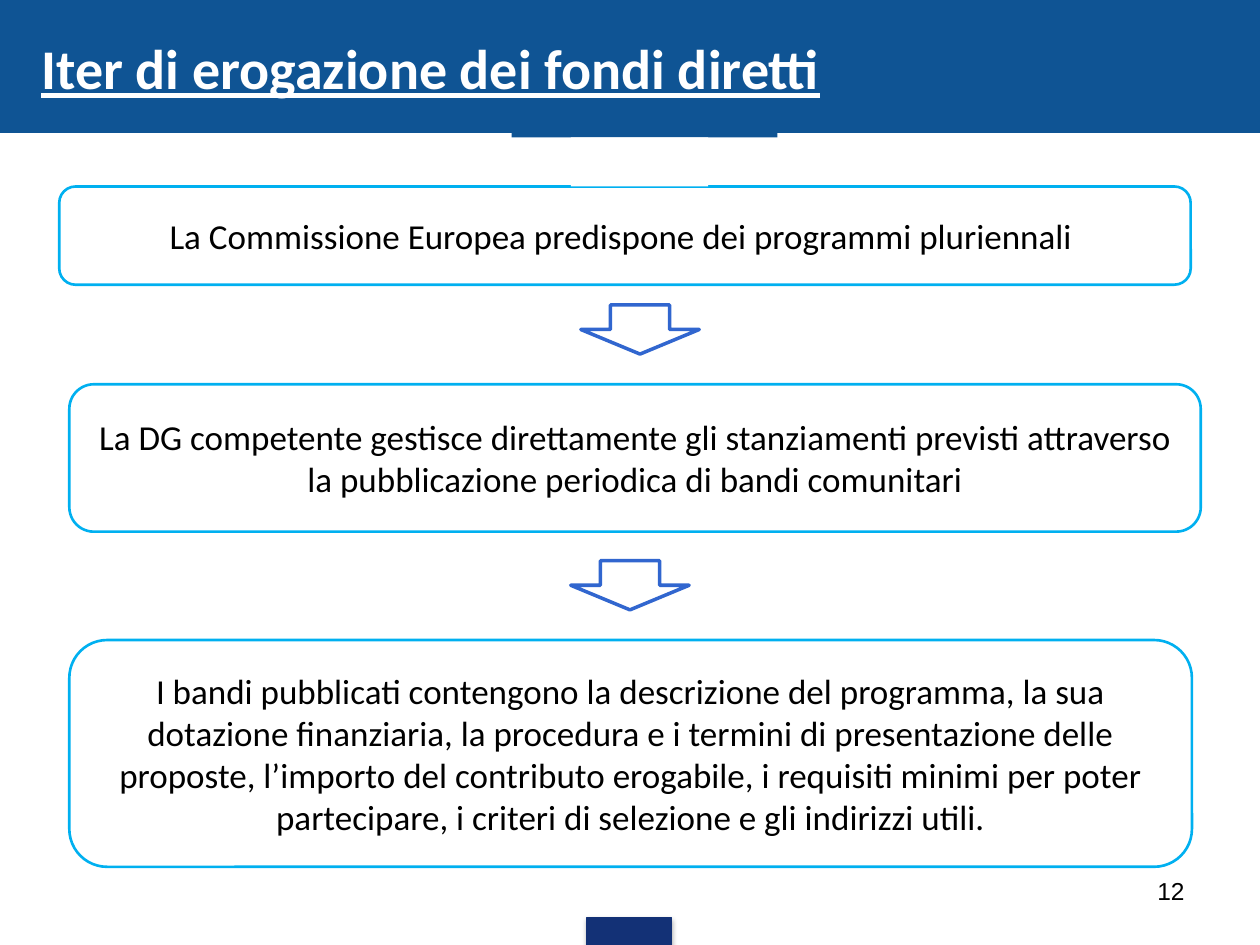
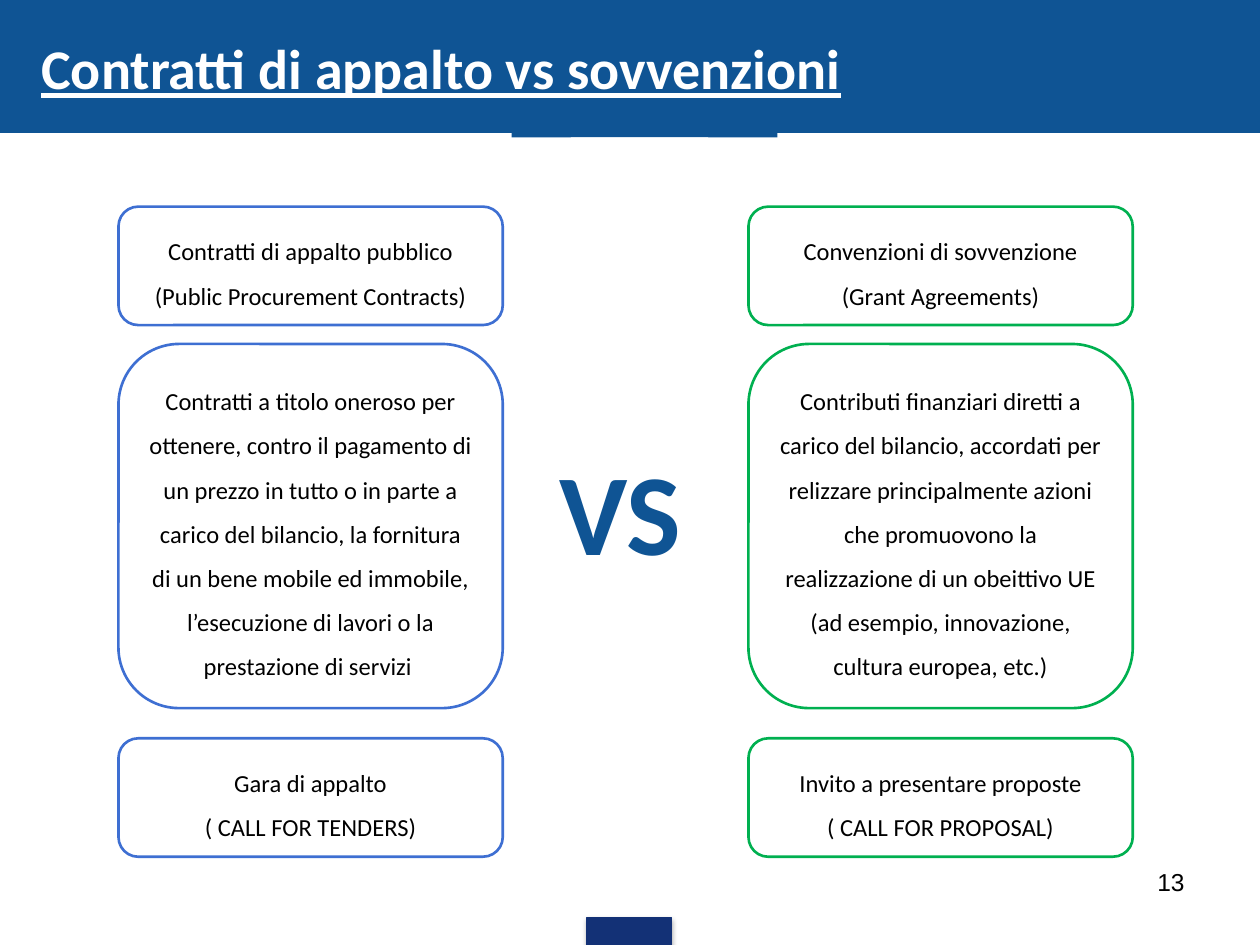
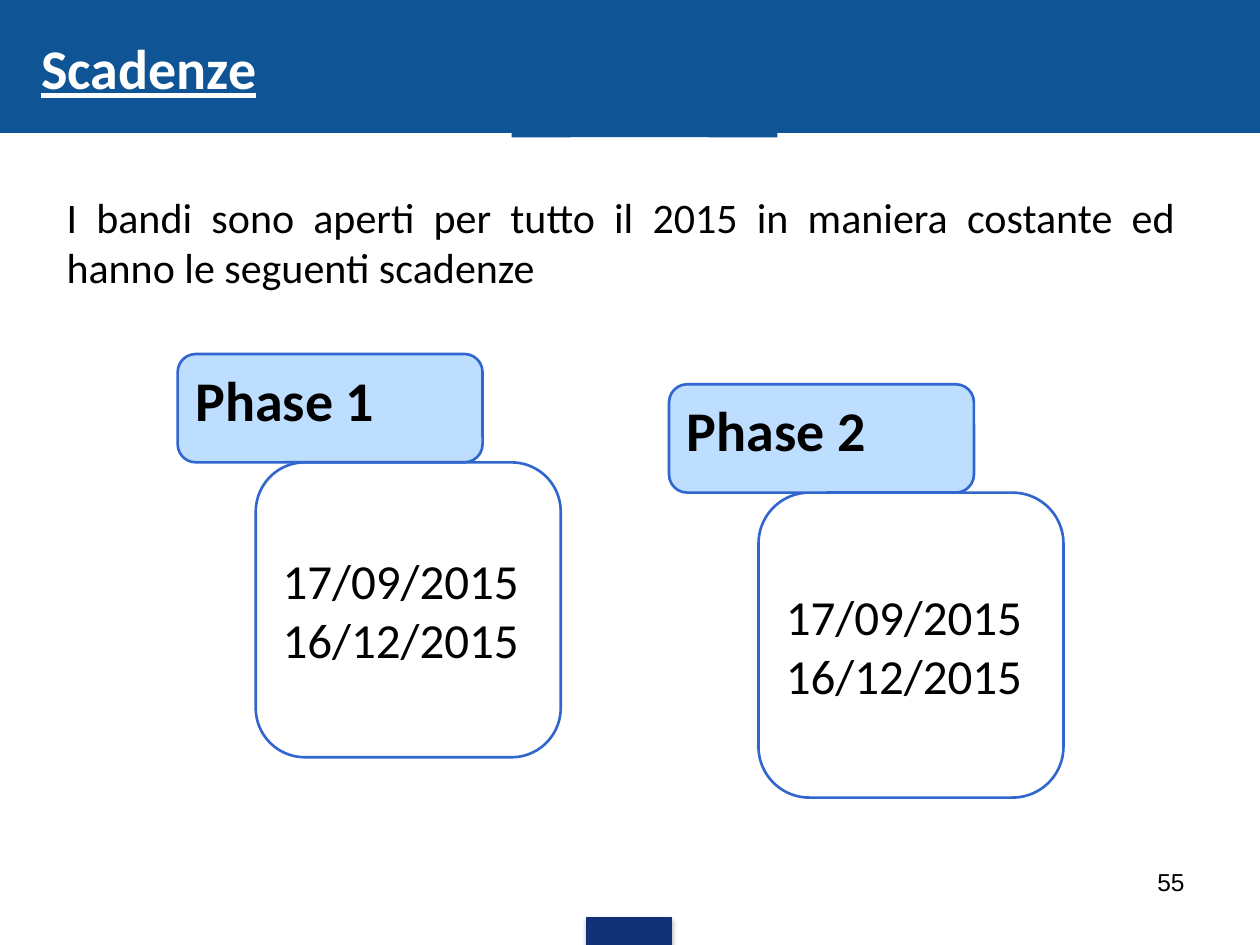
from pptx import Presentation
from pptx.dml.color import RGBColor
from pptx.enum.shapes import MSO_SHAPE as Preset
from pptx.enum.text import MSO_ANCHOR as Anchor, PP_ALIGN as Align
from pptx.oxml import parse_xml
from pptx.util import Inches, Pt

# Shared colours
BAND, FOOTER = "0F5494", "133176"
BLUE, COLUMN_BLUE, CYAN, GREEN = "3166CF", "3E6FD2", "00B0F0", "00B050"
PALE, WHITE, BLACK = "BDDEFF", "FFFFFF", "000000"

SOFT_SHADOW = (
    '<a:effectLst xmlns:a="http://schemas.openxmlformats.org/drawingml/2006/main">'
    '<a:outerShdw blurRad="39370" dist="22860" dir="5400000" rotWithShape="0">'
    '<a:srgbClr val="000000"><a:alpha val="35000"/></a:srgbClr>'
    '</a:outerShdw></a:effectLst>')


def colour(code):
    return RGBColor.from_string(code)


class SlideBuilder:
    """Holds the deck, its style and the slide being built."""

    font = "Calibri"

    def __init__(self):
        self.deck = Presentation()
        self.deck.slide_width, self.deck.slide_height = Inches(10), Inches(7.5)
        self.page = None

    def start(self):
        """Open a slide with the header band and the footer mark."""
        self.page = self.deck.slides.add_slide(self.deck.slide_layouts[6])
        self.shape(Preset.RECTANGLE, (0, 0, 10, 1.05), BAND, BAND, 0.75)
        mark = self.shape(Preset.RECTANGLE, (4.66, 7.28, 0.67, 0.22), FOOTER, FOOTER, 0.75)
        properties = mark._element.spPr
        for effect in properties.findall("{*}effectLst"):
            properties.remove(effect)
        properties.append(parse_xml(SOFT_SHADOW))

    def finish(self, title, number, number_top=6.83):
        """Add the tabs under the header, the title and the page number."""
        self.shape(Preset.RECTANGLE, (4.06, 0, 2.11, 1.09), BAND)
        self.shape(Preset.RECTANGLE, (4.53, 1.09, 1.09, 0.39), WHITE)
        self.label((0.23, 0.22, 7.58, 0.64), [title], 32, WHITE, bold=True, underline=True)
        self.label((7.17, number_top, 2.33, 0.52), [str(number)], 14,
                   align=Align.RIGHT, font="Arial")

    def shape(self, preset, place, fill=None, line=None, width=1.5):
        box = self.page.shapes.add_shape(preset, *map(Inches, place))
        box.shadow.inherit = False
        if fill:
            box.fill.solid()
            box.fill.fore_color.rgb = colour(fill)
        else:
            box.fill.background()
        if line:
            box.line.color.rgb = colour(line)
            box.line.width = Pt(width)
        else:
            box.line.fill.background()
        return box

    def card(self, place, lines, size, line, fill=WHITE, **style):
        """Rounded box with text centred in its height."""
        box = self.shape(Preset.ROUNDED_RECTANGLE, place, fill, line)
        box.text_frame.vertical_anchor = Anchor.MIDDLE
        self.set_text(box, lines, size, **style)
        return box

    def label(self, place, lines, size, ink=BLACK, **style):
        box = self.page.shapes.add_textbox(*map(Inches, place))
        self.set_text(box, lines, size, ink, **style)

    def set_text(self, box, lines, size, ink=BLACK, align=Align.LEFT, spacing=None,
                 bold=None, underline=None, font=None):
        frame = box.text_frame
        frame.word_wrap = True
        frame.text = "\n".join(lines)
        for para in frame.paragraphs:
            para.alignment = align
            if spacing:
                para.line_spacing = spacing
            for span in para.runs:
                span.font.name = font or self.font
                span.font.size = Pt(size)
                span.font.color.rgb = colour(ink)
                span.font.bold = bold
                span.font.underline = underline


def funding_steps(builder):
    builder.start()
    steps = [
        ((0.47, 1.48, 8.98, 0.78),
         "La Commissione Europea predispone dei programmi pluriennali "),
        ((0.55, 3.05, 8.98, 1.17),
         "La DG competente gestisce direttamente gli stanziamenti previsti attraverso "
         "la pubblicazione periodica di bandi comunitari"),
        ((0.55, 5.08, 8.91, 1.8),
         "I bandi pubblicati contengono la descrizione del programma, la sua dotazione "
         "finanziaria, la procedura e i termini di presentazione delle proposte, l’importo "
         "del contributo erogabile, i requisiti minimi per poter partecipare, i criteri di "
         "selezione e gli indirizzi utili."),
    ]
    for place, text in steps:
        builder.card(place, [text], 20, CYAN, align=Align.CENTER)
    for left, top in ((4.61, 2.42), (4.53, 4.45)):
        builder.shape(Preset.DOWN_ARROW, (left, top, 0.94, 0.39), WHITE, BLUE, 2)
    builder.finish("Iter di erogazione dei fondi diretti", 12, number_top=6.9)


def contracts_and_grants(builder):
    builder.start()
    rows = [(1.64, 0.94), (2.73, 2.89), (5.86, 0.94)]
    columns = [
        (0.94, COLUMN_BLUE, [
            ["Contratti di appalto pubblico", "(Public Procurement Contracts)"],
            ["Contratti a titolo oneroso per ottenere, contro il pagamento di un prezzo in "
             "tutto o in parte a carico del bilancio, la fornitura di un bene mobile ed "
             "immobile, l’esecuzione di lavori o la prestazione di servizi "],
            ["Gara di appalto", "( CALL FOR TENDERS)"]]),
        (5.94, GREEN, [
            ["Convenzioni di sovvenzione", "(Grant Agreements)"],
            ["Contributi finanziari diretti a carico del bilancio, accordati per relizzare "
             "principalmente azioni che promuovono la realizzazione di un obeittivo UE "
             "(ad esempio, innovazione, cultura europea, etc.)"],
            ["Invito a presentare proposte", "( CALL FOR PROPOSAL)"]]),
    ]
    for left, line, cards in columns:
        for (top, height), lines in zip(rows, cards):
            builder.card((left, top, 3.05, height), lines, 14, line,
                         align=Align.CENTER, spacing=1.5)
    builder.label((4.3, 3.44, 1.25, 1.21), ["VS"], 66, BAND, align=Align.CENTER, bold=True)
    builder.finish("Contratti di appalto vs sovvenzioni", 13)


def deadlines(builder):
    builder.start()
    builder.label((0.43, 1.47, 9, 0.96),
                  ["I bandi sono aperti per tutto il 2015 in maniera costante ed hanno "
                   "le seguenti scadenze"], 24, align=Align.JUSTIFY)
    # Each phase: heading box, with its dates box hanging below to the right
    head_height = 0.86
    phases = [("Phase 1", 1.41, 2.81, 2.03, 2.34), ("Phase 2", 5.31, 3.05, 6.02, 2.42)]
    for name, left, top, dates_left, dates_height in phases:
        builder.card((dates_left, top + head_height, 2.42, dates_height),
                     ["17/09/2015", "16/12/2015"], 28, BLUE, fill=None)
        heading = builder.card((left, top, 2.42, head_height), [name], 32, BLUE,
                               fill=PALE, bold=True)
        heading.text_frame.margin_bottom = Inches(0.2)
    builder.finish("Scadenze", 55)


def main():
    builder = SlideBuilder()
    for build in (funding_steps, contracts_and_grants, deadlines):
        build(builder)
    builder.deck.save("out.pptx")


if __name__ == "__main__":
    main()
